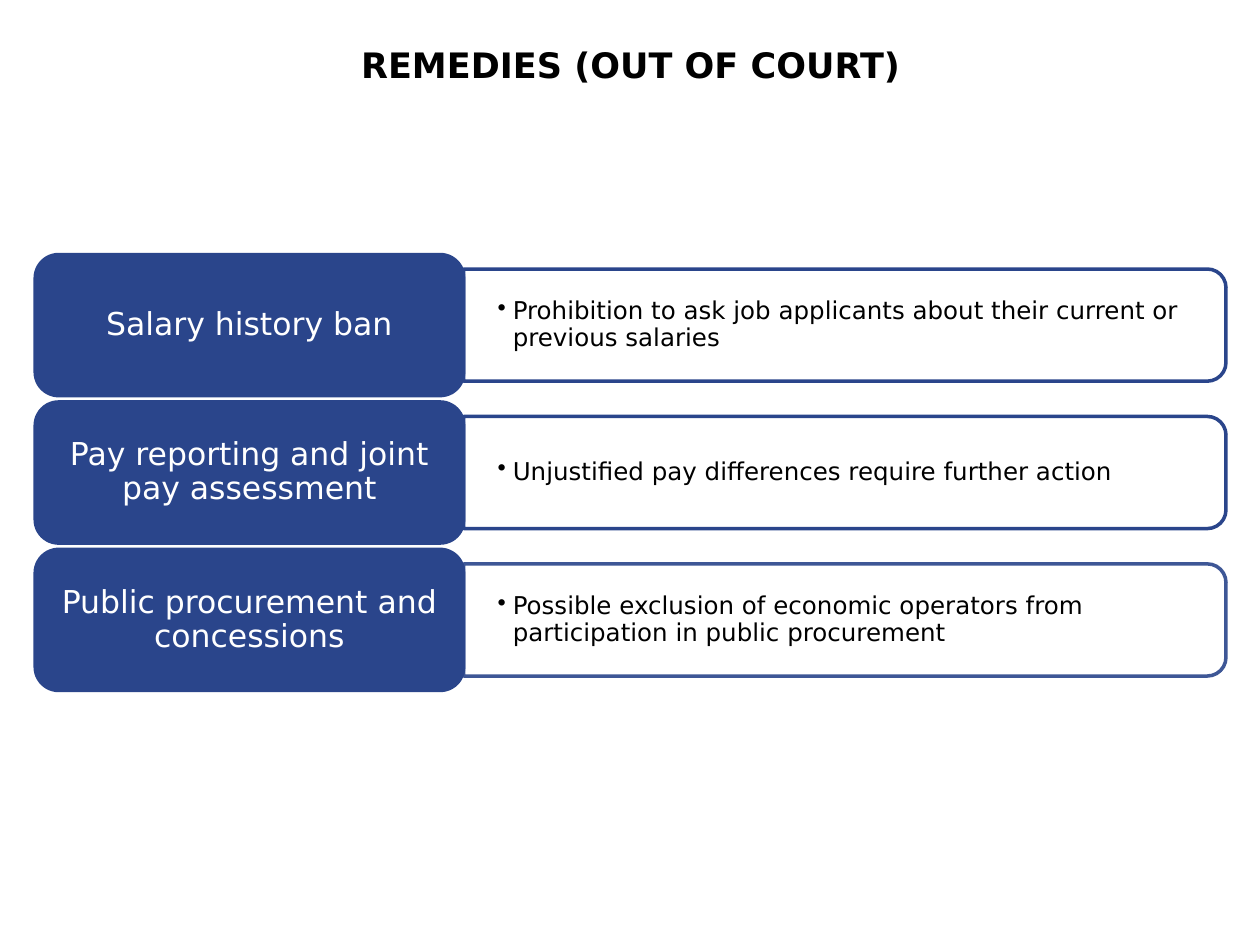
from dataclasses import dataclass

from lxml import etree
from pptx import Presentation
from pptx.dml.color import RGBColor
from pptx.enum import shapes, text
from pptx.oxml import ns
from pptx.util import Inches, Pt


@dataclass(frozen=True)
class Theme:
    font: str = "DejaVu Sans"
    blue: RGBColor = RGBColor(0x2A, 0x45, 0x8B)
    white: RGBColor = RGBColor(0xFF, 0xFF, 0xFF)
    black: RGBColor = RGBColor(0, 0, 0)
    title_size: int = 20
    label_size: int = 18
    detail_size: int = 14
    line_width: int = 2
    opacity: int = 90


@dataclass(frozen=True)
class Remedy:
    label: str
    detail: str
    line_opacity: int = 100


THEME = Theme()
REMEDIES = [
    Remedy("Salary history ban",
           "Prohibition to ask job applicants about their current or previous salaries"),
    Remedy("Pay reporting and joint pay assessment",
           "Unjustified pay differences require further action"),
    Remedy("Public procurement and concessions",
           "Possible exclusion of economic operators from participation in public procurement",
           THEME.opacity),
]

# Layout in inches
LEFT, FIRST_TOP, ROW_STEP = 0.28, 2.02, 1.17
LABEL_WIDTH, LABEL_HEIGHT = 3.4, 1.12
PANEL_LEFT = LEFT + LABEL_WIDTH
PANEL_WIDTH, PANEL_HEIGHT = 6.05, 0.89
DETAIL_WIDTH, DETAIL_HEIGHT = 6.0, 0.81
BULLET_INDENT = 0.12


def set_opacity(color_format_parent, percent: int) -> None:
    """Add an alpha value to the solid colour below an element."""
    if percent < 100:
        color = color_format_parent.find(".//" + ns.qn("a:srgbClr"))
        etree.SubElement(color, ns.qn("a:alpha"), val=str(percent * 1000))


def write_text(box, content: str, *, size: int, color: RGBColor,
               align=text.PP_ALIGN.CENTER, bold: bool = False, spacing: float = 1.0,
               margins: tuple[float, float] = (0.1, 0.05), bullet: bool = False) -> None:
    """Fill a shape with one vertically centred paragraph."""
    frame = box.text_frame
    frame.word_wrap = True
    frame.vertical_anchor = text.MSO_ANCHOR.MIDDLE
    frame.margin_left = frame.margin_right = Inches(margins[0])
    frame.margin_top = frame.margin_bottom = Inches(margins[1])
    para = frame.paragraphs[0]
    para.alignment = align
    para.line_spacing = spacing
    if bullet:
        properties = para._p.get_or_add_pPr()
        properties.set("marL", str(Inches(BULLET_INDENT)))
        properties.set("indent", str(-Inches(BULLET_INDENT)))
        etree.SubElement(properties, ns.qn("a:buChar"), char="•")
    span = para.add_run()
    span.text = content
    span.font.name = THEME.font
    span.font.size = Pt(size)
    span.font.bold = bold
    span.font.color.rgb = color


def add_block(page, kind, left: float, top: float, width: float, height: float,
              fill: RGBColor):
    """Add a blue-outlined shape without a shadow."""
    block = page.shapes.add_shape(kind, Inches(left), Inches(top),
                                  Inches(width), Inches(height))
    block.shadow.inherit = False
    block.fill.solid()
    block.fill.fore_color.rgb = fill
    block.line.color.rgb = THEME.blue
    block.line.width = Pt(THEME.line_width)
    return block


def add_remedy(page, remedy: Remedy, top: float) -> None:
    middle = top + LABEL_HEIGHT / 2

    # Panel: turned a quarter so that its rounded corners face right
    panel = add_block(page, shapes.MSO_SHAPE.ROUND_2_SAME_RECTANGLE,
                      PANEL_LEFT + (PANEL_WIDTH - PANEL_HEIGHT) / 2,
                      middle - PANEL_WIDTH / 2, PANEL_HEIGHT, PANEL_WIDTH, THEME.white)
    panel.rotation = 90
    outline = panel.line._get_or_add_ln()
    set_opacity(outline, remedy.line_opacity)
    set_opacity(panel._element.spPr.find(ns.qn("a:solidFill")), THEME.opacity)

    # Detail text over the panel
    detail = page.shapes.add_textbox(Inches(PANEL_LEFT), Inches(middle - DETAIL_HEIGHT / 2),
                                     Inches(DETAIL_WIDTH), Inches(DETAIL_HEIGHT))
    write_text(detail, remedy.detail, size=THEME.detail_size, color=THEME.black,
               align=text.PP_ALIGN.LEFT, spacing=0.9, margins=(0.27, 0.14), bullet=True)

    # Label
    label = add_block(page, shapes.MSO_SHAPE.ROUNDED_RECTANGLE, LEFT, top,
                      LABEL_WIDTH, LABEL_HEIGHT, THEME.blue)
    write_text(label, remedy.label, size=THEME.label_size, color=THEME.white,
               spacing=0.9, margins=(0.07, 0.04))


def main() -> None:
    deck = Presentation()
    deck.slide_width, deck.slide_height = Inches(10), Inches(7.5)
    page = deck.slides.add_slide(deck.slide_layouts[6])

    # Title
    title = page.shapes.add_textbox(Inches(LEFT), Inches(0.21), Inches(9.45), Inches(0.6))
    write_text(title, "REMEDIES (OUT OF COURT)", size=THEME.title_size,
               color=THEME.black, bold=True)

    # Remedy rows
    for row, remedy in enumerate(REMEDIES):
        add_remedy(page, remedy, FIRST_TOP + row * ROW_STEP)

    deck.save("out.pptx")


if __name__ == "__main__":
    main()
